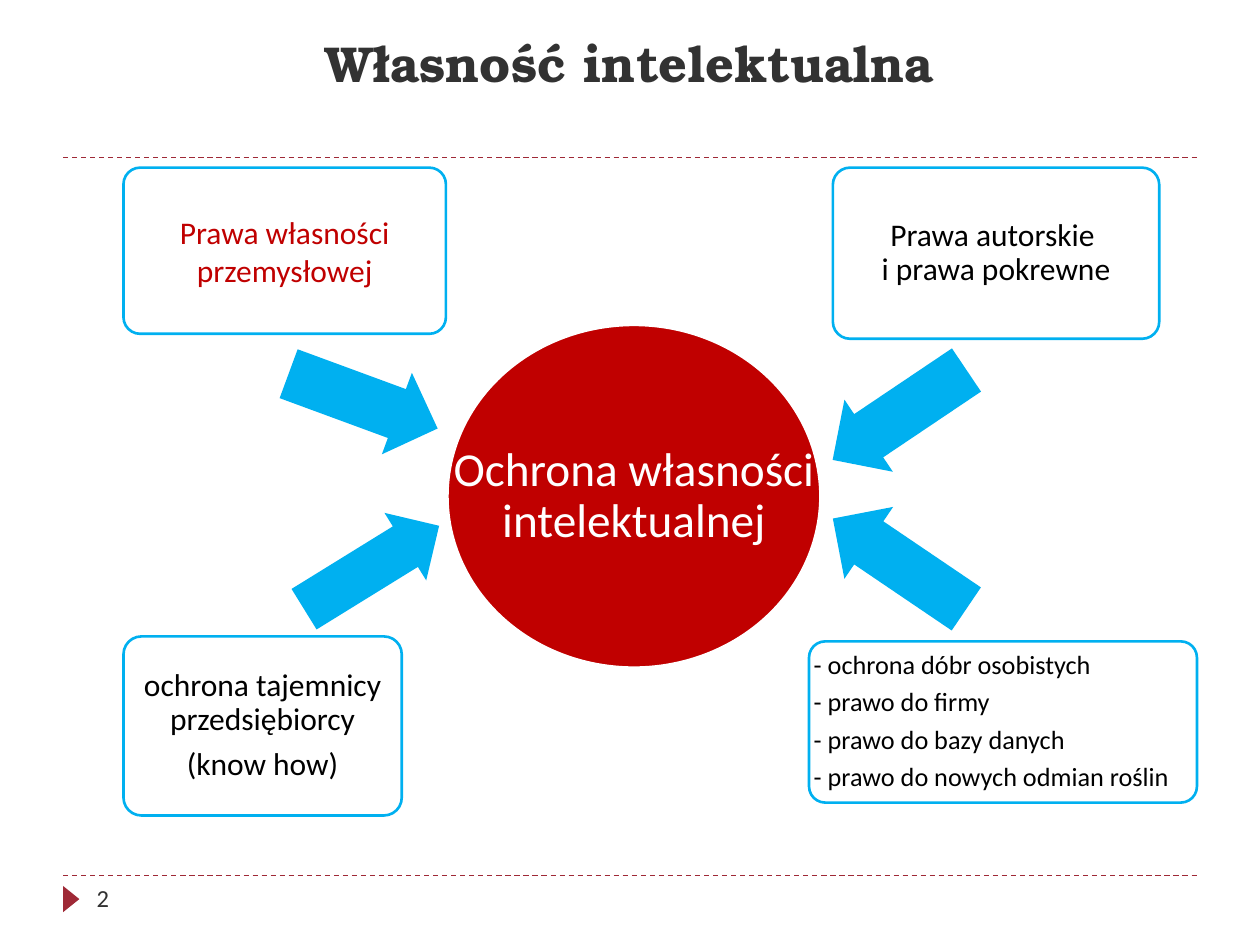
"""Build a slide on the parts of intellectual property protection."""
from lxml import etree
from pptx import Presentation
from pptx import util as u
from pptx.dml.color import RGBColor
from pptx.enum import dml, shapes, text
from pptx.oxml.ns import qn

RED = RGBColor(0xC0, 0x00, 0x00)
WINE = RGBColor(0x9F, 0x29, 0x36)
BLUE = RGBColor(0x00, 0xB0, 0xF0)
GREY = RGBColor(0x32, 0x32, 0x32)
BLACK = RGBColor(0x00, 0x00, 0x00)
WHITE = RGBColor(0xFF, 0xFF, 0xFF)
KIND = shapes.MSO_SHAPE
MID = text.MSO_ANCHOR.MIDDLE
LEFT, CENTER = text.PP_ALIGN.LEFT, text.PP_ALIGN.CENTER

deck = Presentation()
deck.slide_width, deck.slide_height = u.Cm(25.4), u.Cm(19.05)
slide = deck.slides.add_slide(deck.slide_layouts[6])
tree = slide.shapes


def draw(kind, place, fill=None, line=None):
    shape = tree.add_shape(kind, *[u.Cm(n) for n in place])
    shape.shadow.inherit = False
    if fill is None:
        shape.fill.background()
    else:
        shape.fill.solid()
        shape.fill.fore_color.rgb = fill
    if line is None:
        shape.line.fill.background()
    else:
        shape.line.color.rgb = line
        shape.line.width = u.Pt(1.5)
    return shape


def write(shape, paras, size, color, align=CENTER, space=1, after=0,
          pad=0, wrap=True, font="Calibri", bold=False):
    frame = shape.text_frame
    frame.word_wrap = wrap
    frame.vertical_anchor = MID
    frame.margin_left = frame.margin_right = u.Cm(pad)
    frame.margin_top = frame.margin_bottom = u.Cm(0)
    for i, lines in enumerate(paras):
        para = frame.add_paragraph() if i else frame.paragraphs[0]
        para.alignment = align
        para.line_spacing = space
        para.space_after = u.Pt(after)
        for j, line in enumerate(lines.split("\n")):
            if j:
                para.add_line_break()
            run = para.add_run()
            run.text = line
            run.font.name, run.font.size = font, u.Pt(size)
            run.font.bold = bold
            run.font.color.rgb = color


for y in (17.65, 3.18):
    rule = tree.add_connector(shapes.MSO_CONNECTOR.STRAIGHT,
                              u.Cm(1.27), u.Cm(y), u.Cm(24.13), u.Cm(y))
    rule.line.color.rgb = WINE
    rule.line.width = u.Pt(0.75)
    rule.line.dash_style = dml.MSO_LINE.DASH
    etree.SubElement(rule._element.spPr, qn("a:effectLst"))

mark = draw(KIND.ISOSCELES_TRIANGLE, (1.17, 17.96, 0.53, 0.33), WINE)
mark.rotation = 90

title = tree.add_textbox(u.Cm(1.27), u.Cm(0.43), u.Cm(22.86), u.Cm(1.65))
write(title, ["Własność intelektualna"], 28.8, GREY,
      font="TeX Gyre Bonum", bold=True)

core = draw(KIND.OVAL, (9.02, 6.55, 7.52, 6.91), RED, WHITE)
write(core, ["Ochrona własności\nintelektualnej"], 27, WHITE,
      space=0.9, after=9, wrap=False)

arrows = [
    (5.72, 7.21, 3.2, 1.75, 200.2),
    (5.89, 10.64, 3.2, 1.6, 148.3),
    (16.51, 10.49, 3.25, 1.75, 34.1),
    (16.51, 7.49, 3.25, 1.75, 326.1),
]
for *place, turn in arrows:
    arrow = draw(KIND.LEFT_ARROW, place, BLUE)
    arrow.adjustments[0], arrow.adjustments[1] = 0.6, 0.5
    arrow.rotation = turn

boxes = [
    ((2.49, 3.38, 6.5, 3.35), ["Prawa własności przemysłowej"],
     18, RED, CENTER, 1),
    ((2.49, 12.83, 5.61, 3.61),
     ["ochrona tajemnicy przedsiębiorcy", "(know how)"],
     18, BLACK, CENTER, 0.9),
    ((16.31, 12.93, 7.82, 3.25),
     ["- ochrona dóbr osobistych", "- prawo do firmy",
      "- prawo do bazy danych", "- prawo do nowych odmian roślin"],
     15, BLACK, LEFT, 0.9),
    ((16.79, 3.38, 6.58, 3.45), ["Prawa autorskie \ni prawa pokrewne"],
     18, BLACK, CENTER, 0.9),
]
for place, paras, size, color, align, space in boxes:
    box = draw(KIND.ROUNDED_RECTANGLE, place, line=BLUE)
    box.adjustments[0] = 0.1
    write(box, paras, size, color, align, space, after=size * 0.35)

page = tree.add_textbox(u.Cm(1.7), u.Cm(17.65), u.Cm(5.51), u.Cm(0.9))
write(page, ["2"], 14, GREY, LEFT, pad=0.25)

deck.save("out.pptx")
